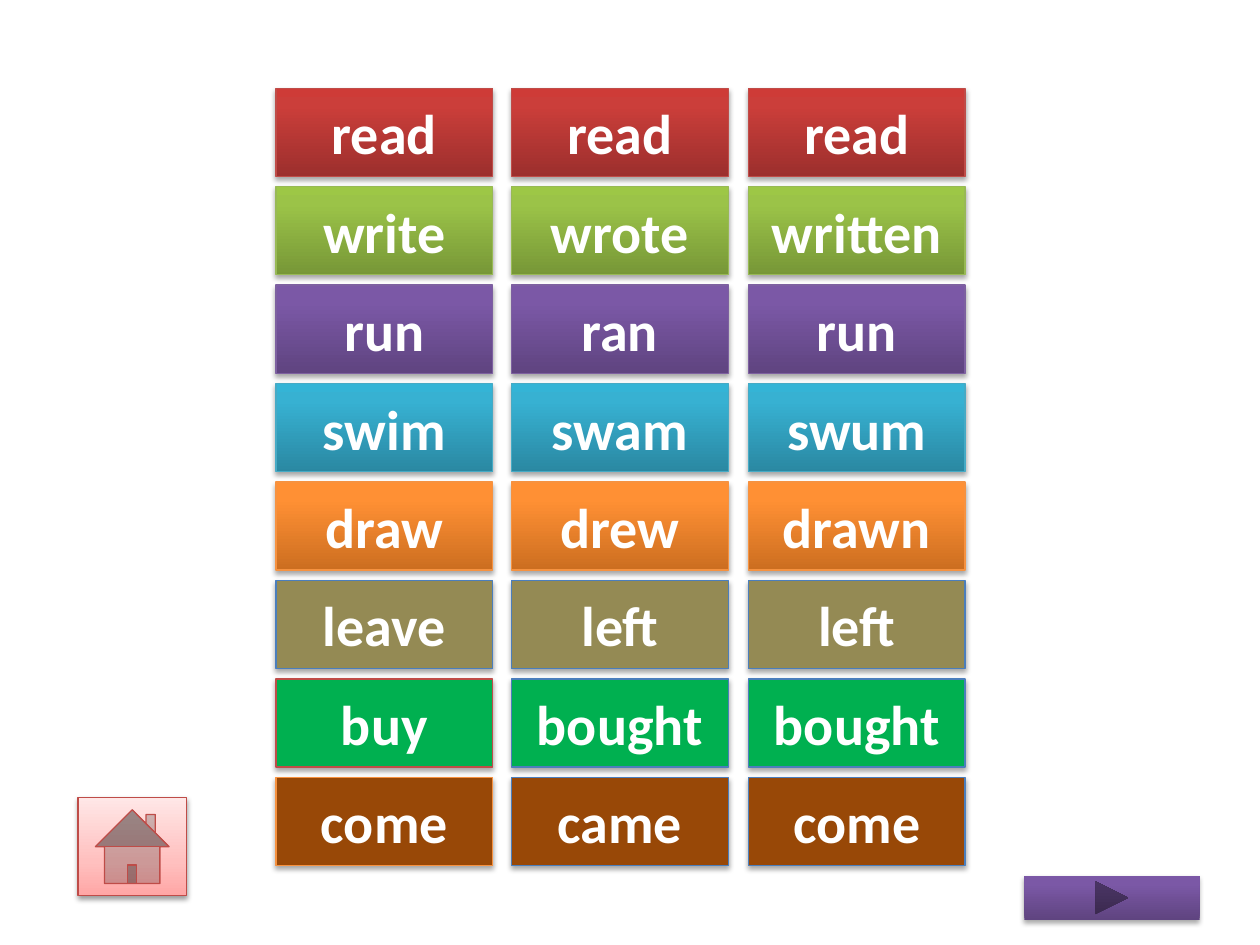
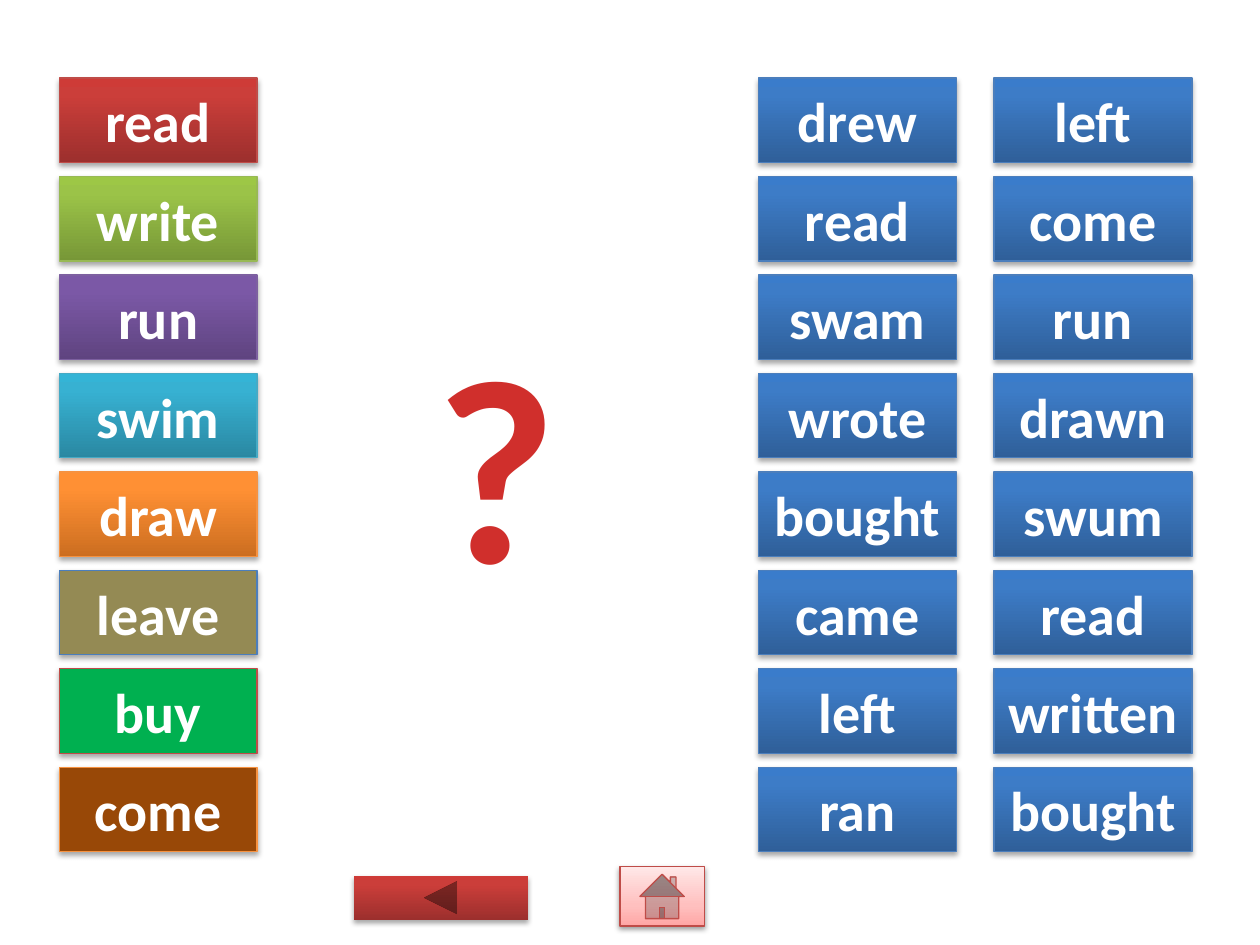
import copy

import lxml.etree
import pptx
import pptx.dml.color
import pptx.enum.shapes
import pptx.enum.text
import pptx.oxml.ns
import pptx.util

Inches = pptx.util.Inches
SHAPES = pptx.enum.shapes.MSO_SHAPE
qn = pptx.oxml.ns.qn

# Gradients run from bottom to top: (position in percent, colour)
RED = [(0, "9C2F2D"), (80, "CB3E3A"), (100, "CE3B37")]
GREEN = [(0, "779737"), (80, "9BC348"), (100, "9DC746")]
PURPLE = [(0, "5F4480"), (80, "7B58A6"), (100, "7C57A8")]
AQUA = [(0, "2A88A2"), (80, "37B1D2"), (100, "34B4D6")]
ORANGE = [(0, "CC6E20"), (80, "FF9034"), (100, "FF9136")]
BLUE = [(0, "2F5F99"), (80, "3D7CC7"), (100, "3A7CCB")]
PINK = [(0, "FFA6A5"), (35, "FFC0BF"), (100, "FFE7E7")]
QUESTION_RED = [(0, "FC7C7A"), (75, "D02F2C"), (100, "C70500")]
RED_EDGE, BLUE_EDGE, ORANGE_EDGE = "BF4C48", "4B7EBC", "F69240"

# Three verb forms, fill, edge of the first form, edge of the other forms
VERBS = [
    (("read", "read", "read"), RED, RED_EDGE, RED_EDGE),
    (("write", "wrote", "written"), GREEN, "98B955", "98B955"),
    (("run", "ran", "run"), PURPLE, "7D60A0", "7D60A0"),
    (("swim", "swam", "swum"), AQUA, "46AAC5", "46AAC5"),
    (("draw", "drew", "drawn"), ORANGE, ORANGE_EDGE, ORANGE_EDGE),
    (("leave", "left", "left"), "948A54", BLUE_EDGE, BLUE_EDGE),
    (("buy", "bought", "bought"), "00B050", RED_EDGE, BLUE_EDGE),
    (("come", "came", "come"), "984807", ORANGE_EDGE, BLUE_EDGE),
]
PAST_FORMS = ["drew", "read", "swam", "wrote", "bought", "came", "left", "ran"]
PARTICIPLES = ["left", "come", "run", "drawn", "swum", "read", "written", "bought"]
ROW_STEP = 5.47 / 7


def paint(fill, colour, angle=90):
    """Fill with one hex colour, or with a three-stop gradient."""
    if isinstance(colour, str):
        fill.solid()
        fill.fore_color.rgb = pptx.dml.color.RGBColor.from_string(colour)
        return
    fill.gradient()
    fill.gradient_angle = angle
    stop_list = fill._xPr.find(".//" + qn("a:gsLst"))
    stop_list.append(copy.deepcopy(stop_list[-1]))
    for stop, (position, shade) in zip(fill.gradient_stops, colour):
        stop.position = position / 100
        stop.color.rgb = pptx.dml.color.RGBColor.from_string(shade)


def add_box(slide, text, at, kind=SHAPES.RECTANGLE, fill=None, edge=None,
            size=32, colour="FFFFFF", angle=90, drop=1.8, shade=35):
    """Add a shadowed shape, or a plain text box when kind is None."""
    place = [Inches(length) for length in at]
    if kind is None:
        box = slide.shapes.add_textbox(*place)
        box.text_frame.word_wrap = False
    else:
        box = slide.shapes.add_shape(kind, *place)
        paint(box.fill, fill)
        if edge:
            paint(box.line.fill, edge)
            box.line.width = pptx.util.Pt(0.75)
        else:
            box.line.fill.background()
        box.shadow.inherit = False
        effects = box._element.spPr.find(qn("a:effectLst"))
        shadow = lxml.etree.SubElement(
            effects, qn("a:outerShdw"), blurRad=str(pptx.util.Pt(3.1)),
            dist=str(pptx.util.Pt(drop)), dir="5400000", rotWithShape="0")
        black = lxml.etree.SubElement(shadow, qn("a:srgbClr"), val="000000")
        lxml.etree.SubElement(black, qn("a:alpha"), val=str(shade * 1000))
    if text:
        paragraph = box.text_frame.paragraphs[0]
        paragraph.alignment = pptx.enum.text.PP_ALIGN.CENTER
        run = paragraph.add_run()
        run.text = text
        run.font.name = "Calibri"
        run.font.size = pptx.util.Pt(size)
        run.font.bold = True
        paint(run.font.fill, colour, angle)


deck = pptx.Presentation()
deck.slide_width, deck.slide_height = Inches(10), Inches(7.5)
blank = deck.slide_layouts[6]
home = dict(kind=SHAPES.ACTION_BUTTON_HOME, fill=PINK, edge=RED_EDGE, drop=1.6, shade=38)

# Slide 1: all three forms of each verb
answers = deck.slides.add_slide(blank)
for row, (forms, fill, first_edge, other_edge) in enumerate(VERBS):
    edges = (first_edge, other_edge, other_edge)
    for left, form, edge in zip((2.19, 4.06, 5.94), forms, edges):
        add_box(answers, form, (left, 0.7 + row * ROW_STEP, 1.72, 0.7), fill=fill, edge=edge)
add_box(answers, "", (8.13, 6.95, 1.39, 0.35),
        kind=SHAPES.ACTION_BUTTON_FORWARD_OR_NEXT, fill=PURPLE)
add_box(answers, "", (0.62, 6.33, 0.86, 0.78), **home)

# Slide 2: match each verb with its shuffled forms
quiz = deck.slides.add_slide(blank)
for row, (forms, fill, first_edge, _) in enumerate(VERBS):
    top = 0.62 + row * ROW_STEP
    add_box(quiz, forms[0], (0.47, top, 1.57, 0.67), fill=fill, edge=first_edge)
    for left, form in ((6.02, PAST_FORMS[row]), (7.89, PARTICIPLES[row])):
        add_box(quiz, form, (left, top, 1.57, 0.67), fill=BLUE, edge=BLUE_EDGE)
add_box(quiz, "", (2.81, 6.95, 1.38, 0.35),
        kind=SHAPES.ACTION_BUTTON_BACK_OR_PREVIOUS, fill=RED)
add_box(quiz, "?", (3.2, 2.34, 1.48, 2.63), kind=None, size=150,
        colour=QUESTION_RED, angle=270)
add_box(quiz, "", (4.92, 6.88, 0.67, 0.47), **home)

deck.save("out.pptx")
